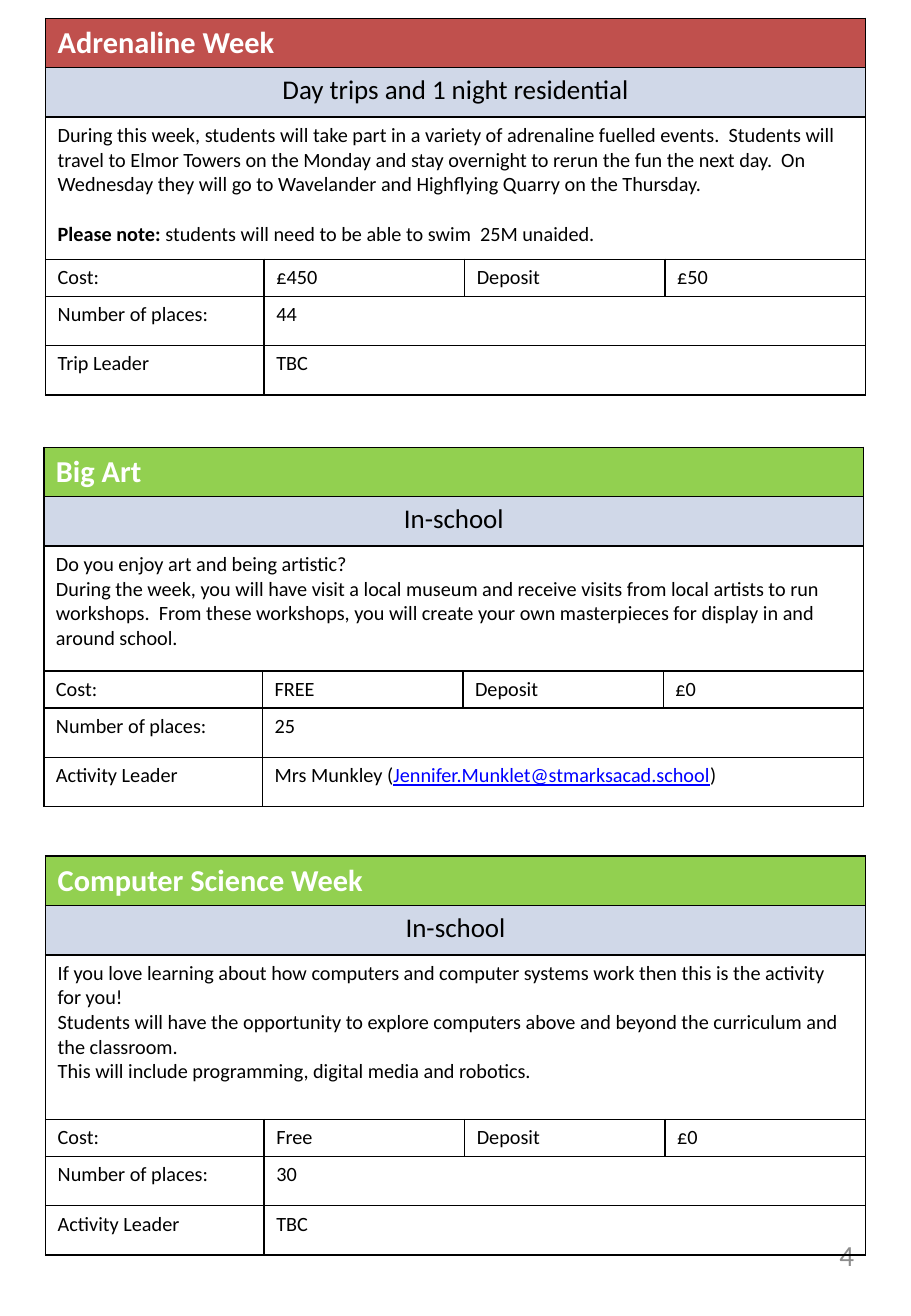
from lxml import etree
from pptx import Presentation
from pptx.dml.color import RGBColor
from pptx.enum.text import MSO_ANCHOR, PP_ALIGN
from pptx.oxml.ns import qn
from pptx.util import Pt

LEFT, CENTER, RIGHT = PP_ALIGN.LEFT, PP_ALIGN.CENTER, PP_ALIGN.RIGHT
MIDDLE = MSO_ANCHOR.MIDDLE

COLORS = {
    "trip": "C0504D",
    "school": "92D050",
    "subtitle": "D0D8E8",
    "black": "000000",
    "white": "FFFFFF",
    "link": "0000FF",
    "page": "8C8C8C",
}
FONT = "Calibri"
PAGE_NUMBER = "4"

# A paragraph is a list of (text, style) runs; style is "", "bold" or "link".
ACTIVITIES = [
    {
        "title": "Adrenaline Week", "color": "trip",
        "subtitle": "Day trips and 1 night residential",
        "about": [
            [("During this week, students will take part in a variety of adrenaline "
              "fuelled events.  Students will travel to Elmor Towers on the Monday and "
              "stay overnight to rerun the fun the next day.  On Wednesday they will go "
              "to Wavelander and Highflying Quarry on the Thursday.", "")],
            [("Please note: ", "bold"),
             ("students will need to be able to swim  25M unaided.", "")],
        ],
        "gap": 14.65,
        "cost": "£450", "deposit": "£50", "places": "44",
        "role": "Trip Leader", "leader": [("TBC", "")],
        "left": 27, "top": 10.8, "about_height": 84.4,
    },
    {
        "title": "Big Art", "color": "school", "subtitle": "In-school",
        "about": [
            [("Do you enjoy art and being artistic?", "")],
            [("During the week, you will have visit a local museum and receive visits "
              "from local artists to run workshops.  From these workshops, you will "
              "create your own masterpieces for display in and around school.", "")],
        ],
        "gap": 0,
        "cost": "FREE", "deposit": "£0", "places": "25",
        "role": "Activity Leader",
        "leader": [("Mrs Munkley (", ""),
                   ("Jennifer.Munklet@stmarksacad.school", "link"), (")", "")],
        "left": 26, "top": 265.1, "about_height": 74.1,
    },
    {
        "title": "Computer Science Week", "color": "school", "subtitle": "In-school",
        "about": [
            [("If you love learning about how computers and computer systems work then "
              "this is the activity for you!", "")],
            [("Students will have the opportunity to explore computers above and beyond "
              "the curriculum and the classroom.", "")],
            [("This will include programming, digital media and robotics.", "")],
        ],
        "gap": 0,
        "cost": "Free", "deposit": "£0", "places": "30",
        "role": "Activity Leader", "leader": [("TBC", "")],
        "left": 27, "top": 507.4, "about_height": 97.6,
    },
]

COLUMN_WIDTHS = [129.6, 118.8, 118.8, 118.8]
ROW_HEIGHT, COST_HEIGHT = 29.3, 21.85


def rgb(name):
    return RGBColor.from_string(COLORS[name])


def write(tf, paragraphs, size=12, color="black", bold=False, align=LEFT, gap=0):
    """Fill a text frame; gap is the space between paragraphs."""
    for i, runs in enumerate(paragraphs):
        p = tf.paragraphs[0] if i == 0 else tf.add_paragraph()
        p.alignment = align
        p.space_before = Pt(gap if i else 0)
        for text, style in runs:
            r = p.add_run()
            r.text = text
            r.font.name, r.font.size = FONT, Pt(size)
            r.font.bold = bold or style == "bold"
            r.font.underline = style == "link"
            r.font.color.rgb = rgb("link" if style == "link" else color)


def add_borders(cell):
    tcPr = cell._tc.get_or_add_tcPr()
    for side in ("a:lnL", "a:lnR", "a:lnT", "a:lnB"):
        ln = etree.SubElement(tcPr, qn(side), w=str(Pt(1)))
        fill = etree.SubElement(ln, qn("a:solidFill"))
        etree.SubElement(fill, qn("a:srgbClr"), val=COLORS["black"])


def add_activity(slide, activity):
    heights = [ROW_HEIGHT, ROW_HEIGHT, activity["about_height"],
               COST_HEIGHT, ROW_HEIGHT, ROW_HEIGHT]
    frame = slide.shapes.add_table(
        len(heights), len(COLUMN_WIDTHS), Pt(activity["left"]), Pt(activity["top"]),
        Pt(sum(COLUMN_WIDTHS)), Pt(sum(heights)))
    table = frame.table
    table.first_row = table.horz_banding = False
    for column, width in zip(table.columns, COLUMN_WIDTHS):
        column.width = Pt(width)
    for row, height in zip(table.rows, heights):
        row.height = Pt(height)

    fills = {0: activity["color"], 1: "subtitle"}
    for i, row in enumerate(table.rows):
        for cell in row.cells:
            add_borders(cell)
            if i in fills:
                cell.fill.solid()
                cell.fill.fore_color.rgb = rgb(fills[i])
            else:
                cell.fill.background()

    last = len(COLUMN_WIDTHS) - 1
    for row, first in ((0, 0), (1, 0), (2, 0), (4, 1), (5, 1)):
        table.cell(row, first).merge(table.cell(row, last))

    write(table.cell(0, 0).text_frame, [[(activity["title"], "")]], 18, "white", True)
    write(table.cell(1, 0).text_frame, [[(activity["subtitle"], "")]], 16, align=CENTER)
    write(table.cell(2, 0).text_frame, activity["about"], gap=activity["gap"])
    details = [
        ["Cost:", activity["cost"], "Deposit", activity["deposit"]],
        ["Number of places:", activity["places"]],
        [activity["role"], activity["leader"]],
    ]
    for i, values in enumerate(details, start=3):
        for j, value in enumerate(values):
            runs = [(value, "")] if isinstance(value, str) else value
            write(table.cell(i, j).text_frame, [runs])


def main():
    prs = Presentation()
    prs.slide_width, prs.slide_height = Pt(540), Pt(780)
    slide = prs.slides.add_slide(prs.slide_layouts[6])

    page = slide.shapes.add_textbox(Pt(387.4), Pt(722.9), Pt(126), Pt(41.8))
    tf = page.text_frame
    tf.word_wrap = True
    tf.vertical_anchor = MIDDLE
    write(tf, [[(PAGE_NUMBER, "")]], 17.3, "page", align=RIGHT)

    for activity in ACTIVITIES:
        add_activity(slide, activity)
    prs.save("out.pptx")


if __name__ == "__main__":
    main()
